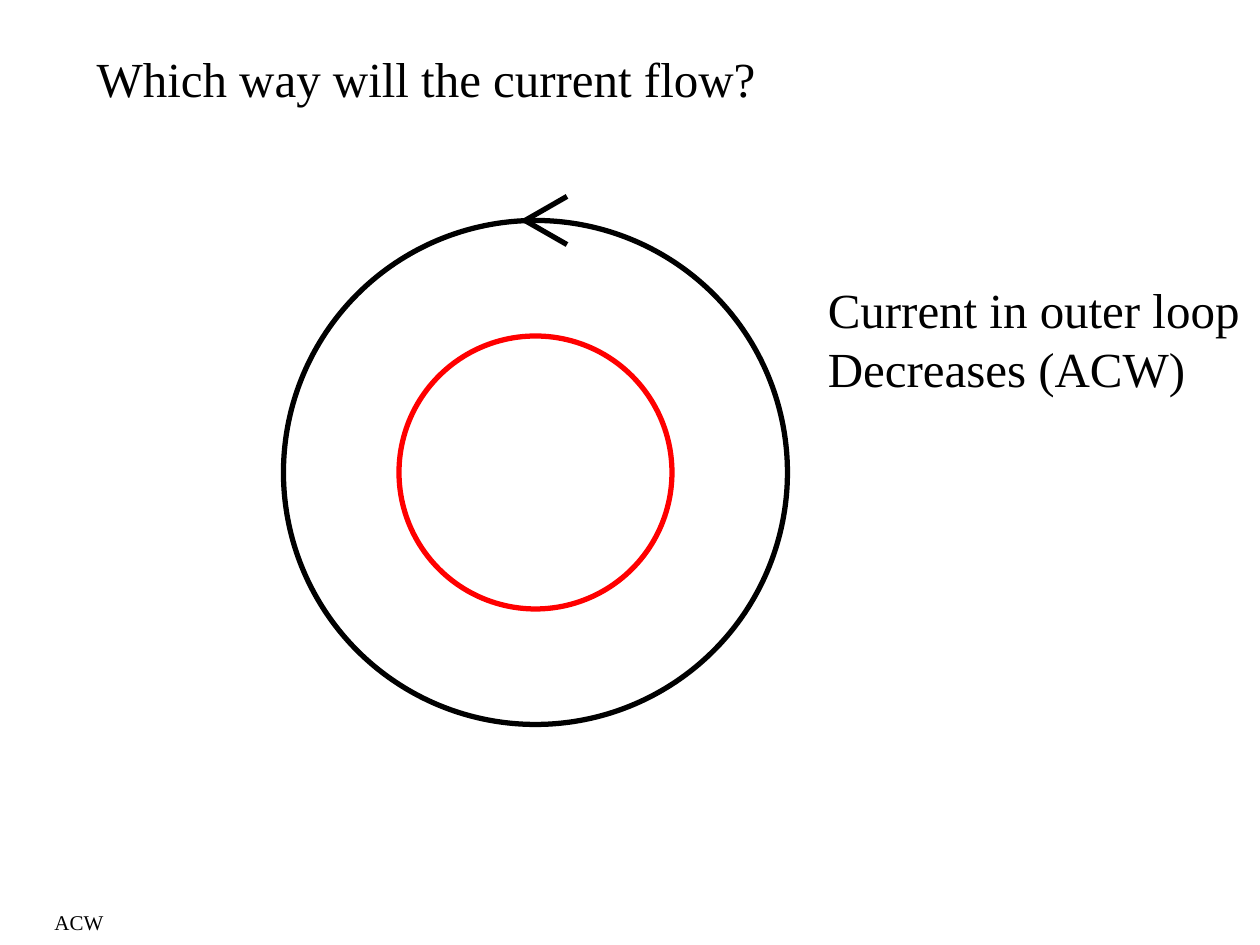
"""Build a slide asking which way current flows in an inner loop."""
from pptx import Presentation
from pptx.dml.color import RGBColor
from pptx.enum.shapes import MSO_CONNECTOR, MSO_SHAPE
from pptx.enum.text import MSO_ANCHOR, MSO_AUTO_SIZE, PP_ALIGN
from pptx.oxml.ns import qn
from pptx.util import Pt
from lxml.etree import SubElement

COLORS = {"ink": "000000", "inner": "FF0000"}


class Sketch:
    """Hold the style and the current slide, and draw its elements."""
    font = "Times New Roman"
    weight = 3

    def __init__(self, slide):
        self.slide = slide

    def color(self, name):
        return RGBColor.from_string(COLORS[name])

    def letter(self, box, text, size, wrap=True):
        frame = box.text_frame
        frame.text = text
        frame.word_wrap = wrap
        frame.auto_size = MSO_AUTO_SIZE.NONE
        frame.vertical_anchor = MSO_ANCHOR.TOP
        para = frame.paragraphs[0]
        para.alignment = PP_ALIGN.LEFT
        para.font.name = self.font
        para.font.size = Pt(size)
        para.font.color.rgb = self.color("ink")

    def title(self, text, left, top, width, height, size=28):
        box = self.slide.shapes.title
        box.left, box.top = Pt(left), Pt(top)
        box.width, box.height = Pt(width), Pt(height)
        self.letter(box, text, size)

    def label(self, text, left, top, width, height, size=28, wrap=True):
        box = self.slide.shapes.add_textbox(
            Pt(left), Pt(top), Pt(width), Pt(height))
        self.letter(box, text, size, wrap)

    def stroke(self, line, color):
        line.color.rgb = self.color(color)
        line.width = Pt(self.weight)

    def loop(self, x, y, radius, color):
        ring = self.slide.shapes.add_shape(
            MSO_SHAPE.OVAL, Pt(x - radius), Pt(y - radius),
            Pt(2 * radius), Pt(2 * radius))
        ring.shadow.inherit = False
        ring.fill.background()
        self.stroke(ring.line, color)

    def line(self, x1, y1, x2, y2, color="ink"):
        link = self.slide.shapes.add_connector(
            MSO_CONNECTOR.STRAIGHT, Pt(x1), Pt(y1), Pt(x2), Pt(y2))
        self.stroke(link.line, color)
        SubElement(link._element.spPr, qn("a:effectLst"))


def main():
    deck = Presentation()
    deck.slide_width, deck.slide_height = Pt(720), Pt(540)
    sketch = Sketch(deck.slides.add_slide(deck.slide_layouts[5]))

    sketch.title("Which way will the current flow?", 48, 24, 630, 41)
    sketch.label("ACW", 24, 516, 42.5, 21.6, size=12, wrap=False)
    sketch.label("Current in outer loop Decreases (ACW)", 466, 156, 254, 74)

    x, y, outer = 306, 270, 144
    sketch.loop(x, y, 78, "inner")
    sketch.loop(x, y, outer, "ink")

    tip, top = x - 6, y - outer
    for rise in (-13.75, 13.75):
        sketch.line(tip, top, tip + 24, top + rise)

    deck.save("out.pptx")


if __name__ == "__main__":
    main()
